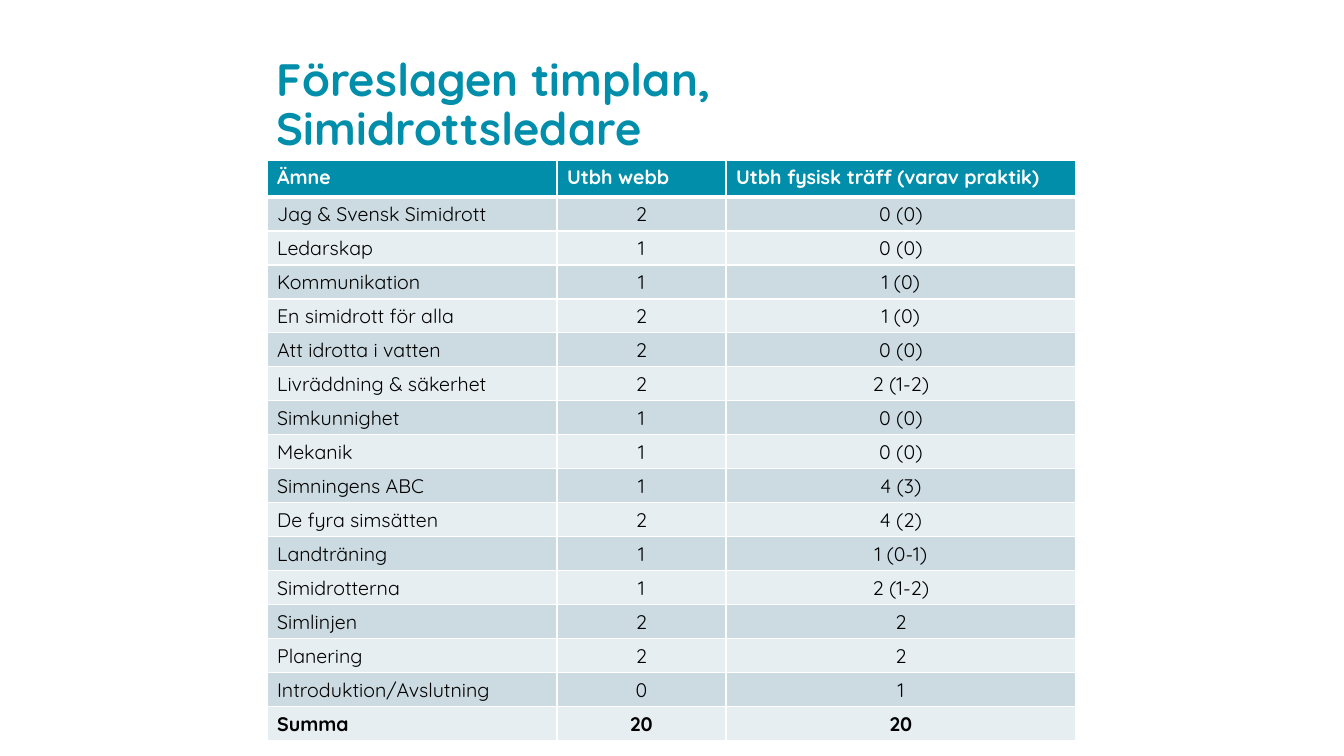
from lxml.etree import SubElement
from pptx import Presentation
from pptx.dml.color import RGBColor
from pptx.enum.text import MSO_ANCHOR, PP_ALIGN
from pptx.oxml.ns import qn
from pptx.util import Pt

PX = 914400 / 100.8
TEAL, WHITE, BLACK = "008EAA", "FFFFFF", "000000"
DARK_BAND, LIGHT_BAND = "CCDBE2", "E7EEF1"

HEADINGS = ("Ämne", "Utbh webb", "Utbh fysisk träff (varav praktik)")
SUBJECTS = [
    ("Jag & Svensk Simidrott", "2", "0 (0)"),
    ("Ledarskap", "1", "0 (0)"),
    ("Kommunikation", "1", "1 (0)"),
    ("En simidrott för alla", "2", "1 (0)"),
    ("Att idrotta i vatten", "2", "0 (0)"),
    ("Livräddning & säkerhet", "2", "2 (1-2)"),
    ("Simkunnighet", "1", "0 (0)"),
    ("Mekanik", "1", "0 (0)"),
    ("Simningens ABC", "1", "4 (3)"),
    ("De fyra simsätten", "2", "4 (2)"),
    ("Landträning", "1", "1 (0-1)"),
    ("Simidrotterna", "1", "2 (1-2)"),
    ("Simlinjen", "2", "2"),
    ("Planering", "2", "2"),
    ("Introduktion/Avslutning", "0", "1"),
]
TOTAL = ("Summa", "20", "20")
COLUMN_WIDTHS = (290, 169, 350)
HEADING_HEIGHT, ROW_HEIGHT = 37, 34


def px(length):
    return round(length * PX)


def color(value):
    return RGBColor.from_string(value)


def write(frame, text, size=14, fill=BLACK, bold=False, align=PP_ALIGN.LEFT, spacing=None):
    paragraph = frame.paragraphs[0]
    paragraph.alignment = align
    paragraph.line_spacing = spacing
    run = paragraph.add_run()
    run.text = text
    run.font.name = "Quicksand"
    run.font.size = Pt(size)
    run.font.bold = bold
    run.font.color.rgb = color(fill)


def set_borders(cell, bottom):
    """Draw white cell borders, 1 pt wide except for the bottom one."""
    properties = cell._tc.get_or_add_tcPr()
    widths = {"a:lnL": 1, "a:lnR": 1, "a:lnT": 1, "a:lnB": bottom}
    for position, (side, width) in enumerate(widths.items()):
        line = properties.makeelement(qn(side), {"w": str(Pt(width))})
        properties.insert(position, line)
        SubElement(SubElement(line, qn("a:solidFill")), qn("a:srgbClr"), val=WHITE)


def add_title(slide, left, top, width, height):
    title = slide.shapes.add_textbox(px(left), px(top), px(width), px(height))
    frame = title.text_frame
    frame.word_wrap = True
    frame.vertical_anchor = MSO_ANCHOR.BOTTOM
    write(frame, "Föreslagen timplan, Simidrottsledare", size=32.4, fill=TEAL,
          bold=True, spacing=0.9)


def add_timetable(slide, left, top, width):
    rows = [HEADINGS, *SUBJECTS, TOTAL]
    height = HEADING_HEIGHT + ROW_HEIGHT * (len(rows) - 1)
    timetable = slide.shapes.add_table(len(rows), len(HEADINGS), px(left), px(top),
                                       px(width), px(height)).table
    for column, column_width in zip(timetable.columns, COLUMN_WIDTHS):
        column.width = px(column_width)
    for r, texts in enumerate(rows):
        heading = r == 0
        band = TEAL if heading else DARK_BAND if r % 2 else LIGHT_BAND
        timetable.rows[r].height = px(HEADING_HEIGHT if heading else ROW_HEIGHT)
        for c, text in enumerate(texts):
            cell = timetable.cell(r, c)
            cell.fill.solid()
            cell.fill.fore_color.rgb = color(band)
            set_borders(cell, bottom=3 if heading else 1)
            write(cell.text_frame, text, fill=WHITE if heading else BLACK,
                  bold=heading or texts is TOTAL,
                  align=PP_ALIGN.LEFT if heading or c == 0 else PP_ALIGN.CENTER)


def main():
    presentation = Presentation()
    presentation.slide_width, presentation.slide_height = px(1344), px(756)
    slide = presentation.slides.add_slide(presentation.slide_layouts[6])
    left, width = 267, sum(COLUMN_WIDTHS)
    add_title(slide, left, 79, width, 81)
    add_timetable(slide, left, 160, width)
    presentation.save("out.pptx")


if __name__ == "__main__":
    main()
